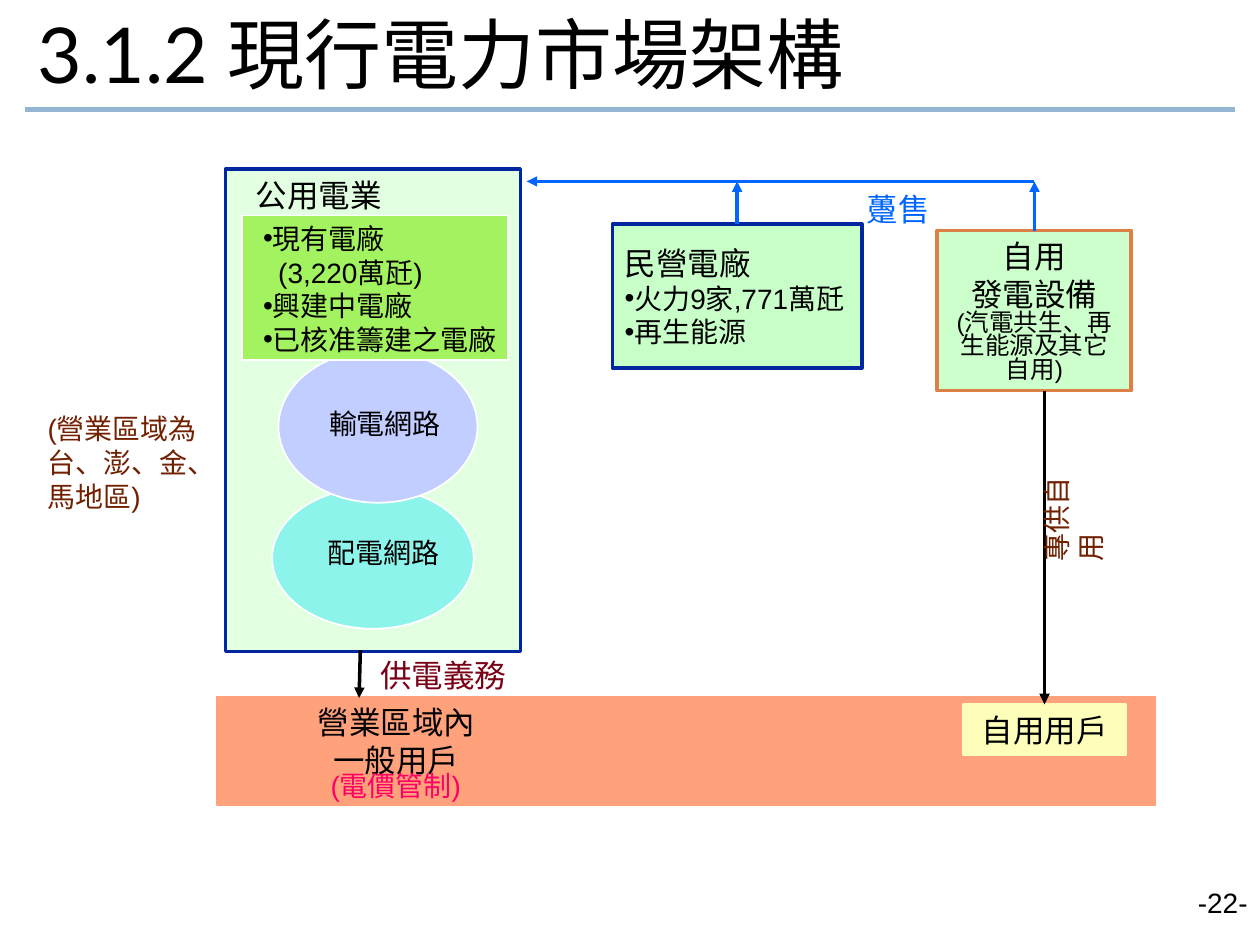
"""Build the slide on the structure of the current electricity market."""
import pptx
import pptx.dml.color
import pptx.enum.shapes
import pptx.enum.text
import pptx.oxml
import pptx.oxml.ns
import pptx.util

PX = 9144
BLACK, NAVY, BLUE, BROWN, WHITE = "000000", "00279F", "0066FF", "712000", "FFFFFF"
SHAPE = pptx.enum.shapes.MSO_SHAPE
ALIGN = pptx.enum.text.PP_ALIGN
ANCHOR = pptx.enum.text.MSO_ANCHOR
TOP = 0


def px(*lengths):
    """Turn px into a list of EMU lengths."""
    return [pptx.util.Emu(length * PX) for length in lengths]


def color(hex_code):
    """Turn a hex string into a colour."""
    return pptx.dml.color.RGBColor.from_string(hex_code)


def add_element(parent, tag, **attributes):
    """Append a drawing element to a parent element."""
    element = pptx.oxml.parse_xml(f"<a:{tag} {pptx.oxml.ns.nsdecls('a')}/>")
    for name, value in attributes.items():
        element.set(name, value)
    parent.append(element)


def indent(paragraph, margin, first, bullet=None):
    """Set the indents of a paragraph in px, and its bullet if it has one."""
    properties = paragraph._p.get_or_add_pPr()
    properties.set("marL", str(margin * PX))
    properties.set("indent", str(first * PX))
    if bullet:
        add_element(properties, "buFont", typeface="Arial")
        add_element(properties, "buChar", char=bullet)


def write(shape, lines, hex_code=BLACK, align=ALIGN.LEFT, anchor=ANCHOR.TOP):
    """Fill a shape with lines of (text, size) or (text, size, indents)."""
    frame = shape.text_frame
    frame.word_wrap = True
    frame.vertical_anchor = anchor
    for index, (text, size, *indents) in enumerate(lines):
        paragraph = frame.add_paragraph() if index else frame.paragraphs[0]
        paragraph.text = text
        if indents:
            indent(paragraph, *indents[0])
        paragraph.alignment = align
        paragraph.font.size = pptx.util.Pt(size)
        paragraph.font.name = "Arial"
        paragraph.font.color.rgb = color(hex_code)


def add_label(slide, box, lines, hex_code=BLACK, align=ALIGN.LEFT):
    """Add a text box at a px box."""
    label = slide.shapes.add_textbox(*px(*box))
    write(label, lines, hex_code, align)
    return label


def add_block(slide, box, fill, line, width=1, kind=SHAPE.RECTANGLE):
    """Add a filled and outlined shape at a px box."""
    block = slide.shapes.add_shape(kind, *px(*box))
    block.shadow.inherit = False
    block.fill.solid()
    block.fill.fore_color.rgb = color(fill)
    block.line.color.rgb = color(line)
    block.line.width = pptx.util.Pt(width)
    return block


def add_line(slide, start, end, hex_code, width=2, arrow=True):
    """Add a straight line between px points, with an arrowhead at its end."""
    line = slide.shapes.add_connector(
        pptx.enum.shapes.MSO_CONNECTOR.STRAIGHT, *px(*start, *end))
    line.line.color.rgb = color(hex_code)
    line.line.width = pptx.util.Pt(width)
    if arrow:
        add_element(line.line._get_or_add_ln(), "tailEnd", type="triangle")
    add_element(line._element.spPr, "effectLst")
    return line


def add_heading(slide, left, top, width):
    """Place the title and the rule below it."""
    title = slide.shapes.title
    title.left, title.top, title.width, title.height = px(left, top, width, 63)
    write(title, [("3.1.2 現行電力市場架構", 44)], anchor=ANCHOR.MIDDLE)
    title.text_frame.paragraphs[0].font.name = "Lato"
    title.text_frame.margin_bottom = px(10)[0]
    title.text_frame.auto_size = pptx.enum.text.MSO_AUTO_SIZE.NONE
    add_line(slide, (left, top + 74), (left + width, top + 74), "94B6D2", 3, arrow=False)


def add_utility(slide, left, top, width, height):
    """Place the utility with its plants, its two networks and its area."""
    bullet = (0, -11, "•")
    add_block(slide, (left, top, width, height), "E2FFE2", NAVY, 2)
    add_label(slide, (left + 14, top + 1, 121, 40), [("公用電業", 18)])
    add_block(slide, (left + 37, top + 253, 160, 112), "8CF4EA", WHITE, kind=SHAPE.OVAL)
    add_block(slide, (left + 42, top + 144, 158, 121), "C1CEFF", WHITE, kind=SHAPE.OVAL)
    add_label(slide, (left + 64, top + 184, 125, 36), [("輸電網路", 16)], align=ALIGN.CENTER)
    add_label(slide, (left + 57, top + 286, 137, 36), [("配電網路", 16)], align=ALIGN.CENTER)
    add_block(slide, (left + 13, top + 37, 211, 115), "A3F25F", WHITE)
    add_label(slide, (left + 20, top + 37, 206, 117), [
        ("現有電廠", 16, bullet),
        ("(3,220萬瓩)", 16, (12, 0)),
        ("興建中電廠", 16, bullet),
        ("已核准籌建之電廠", 16, bullet),
    ])
    add_label(slide, (left - 151, top + 188, 155, 91),
              [("(營業區域為台、澎、金、馬地區)", 16)], BROWN)


def add_private_plants(slide, *box):
    """Place the private power plants."""
    bullet = (0, -11, "•")
    plants = add_block(slide, box, "C8FEC8", NAVY, 2)
    write(plants, [("民營電廠", 18), ("火力9家,771萬瓩", 16, bullet),
                   ("再生能源", 16, bullet)], anchor=ANCHOR.MIDDLE)
    return plants


def add_self_generation(slide, *box):
    """Place the equipment that generates for its owner."""
    equipment = add_block(slide, box, "CCFFCC", "DD8047", 2.25)
    write(equipment, [("自用", 18), ("發電設備", 18),
                      ("(汽電共生、再生能源及其它自用)", 14)], align=ALIGN.CENTER)
    equipment.text_frame.paragraphs[-1].line_spacing = 0.8
    return equipment


def add_customers(slide, left, top, width, height):
    """Place the customer band and return its block of self-use customers."""
    add_block(slide, (left, top, width, height), "FFA27C", "FFA27C")
    add_label(slide, (left + 23, top, 239, 70),
              [("營業區域內", 18), ("一般用戶", 18)], align=ALIGN.CENTER)
    add_label(slide, (left + 73, top + 52, 138, 37),
              [("(電價管制)", 16)], "FF0066", ALIGN.CENTER)
    self_users = add_block(slide, (left + 593, top + 6, 128, 40), "FCFEB9", "FCFEB9", 2)
    write(self_users, [("自用用戶", 18)], align=ALIGN.CENTER)
    return self_users


def add_flows(slide, plants, equipment, self_users):
    """Draw the wholesale, supply and self-use flows with their labels."""
    bus = 144
    centers = [(block.left + block.width // 2) // PX for block in (plants, equipment)]
    add_line(slide, (centers[-1], bus), (418, bus), BLUE)
    for source, center in zip((plants, equipment), centers):
        sale = add_line(slide, (center, 180), (center, bus), BLUE)
        sale.begin_connect(source, TOP)
    add_label(slide, (678, 146, 70, 40), [("躉售", 18)], BLUE)
    add_line(slide, (286, 516), (285, 554), BLACK)
    add_label(slide, (292, 516, 121, 40), [("供電義務", 18)], "790015")
    user_center = (self_users.left + self_users.width // 2) // PX
    own_use = add_line(slide, (user_center, 310), (user_center, 559), BLACK)
    own_use.end_connect(self_users, TOP)
    own_label = add_label(slide, (794, 382, 100, 47), [("專供自用", 16)], BROWN)
    own_label.rotation = 270


def main():
    """Build and save the slide."""
    deck = pptx.Presentation()
    deck.slide_width, deck.slide_height = px(1000, 750)
    slide = deck.slides.add_slide(deck.slide_layouts[5])
    add_heading(slide, 20, 13, 960)
    add_utility(slide, 179, 134, 234, 383)
    plants = add_private_plants(slide, 486, 178, 198, 114)
    equipment = add_self_generation(slide, 744, 183, 154, 127)
    self_users = add_customers(slide, 172, 553, 745, 86)
    add_flows(slide, plants, equipment, self_users)
    add_label(slide, (767, 698, 233, 52), [("-22-", 16)], align=ALIGN.RIGHT)
    deck.save("out.pptx")


if __name__ == "__main__":
    main()
